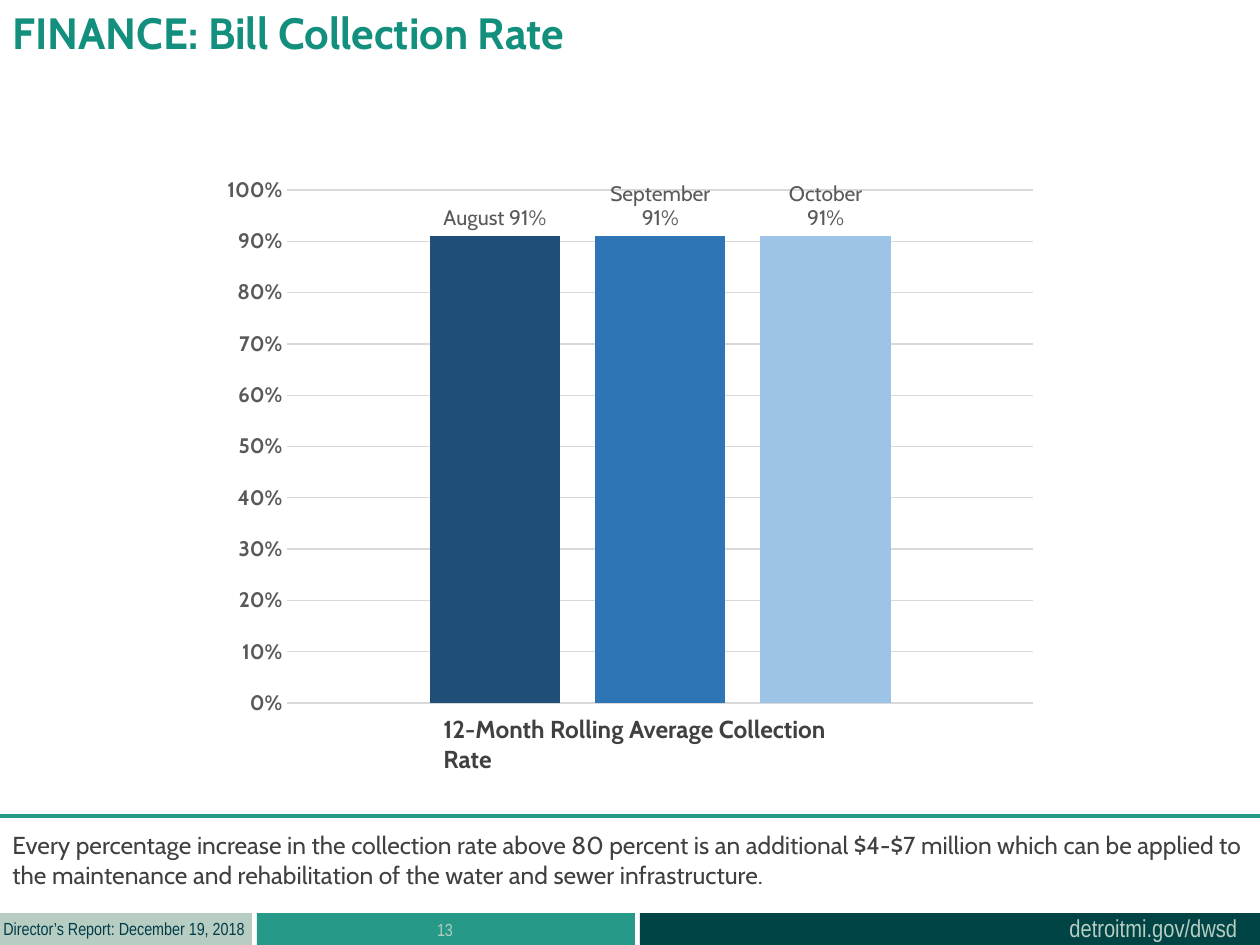
from lxml import etree
from pptx import Presentation, util as u
from pptx.chart.data import CategoryChartData
from pptx.dml.color import RGBColor
from pptx.enum import chart as ch, shapes, text
from pptx.oxml import parse_xml
from pptx.oxml.ns import nsdecls, qn

PX = 914400 / 126
COLORS = {
    "teal": "279989", "dark": "004445", "sage": "B7CDC2", "navy": "003B49",
    "title": "138F7E", "body": "404040", "label": "595959", "grid": "D9D9D9",
    "august": "1F4E79", "september": "2E75B6", "october": "9DC3E6",
}

# Content: boxes are left, top, width, height in px
BARS = [
    ((257, 913, 378, 32), "teal"),
    ((640, 913, 620, 32), "dark"),
    ((0, 913, 252, 32), "sage"),
]
NARROW, CABIN = "Arial Narrow", "Cabin"
TEXTS = [
    ("detroitmi.gov/dwsd", (1057, 907, 195, 43), False, "l",
     {"name": NARROW, "size": 14}, "sage"),
    ("Director’s Report: December 19, 2018", (-9, 912, 276, 34), False, "l",
     {"name": NARROW, "size": 10}, "navy"),
    ("13", (256, 913, 378, 50), True, "c", {"name": NARROW, "size": 10}, "sage"),
    ("FINANCE: Bill Collection Rate", (0, 0, 956, 97), True, "l",
     {"name": CABIN, "size": 25, "bold": True}, "title"),
    ("Every percentage increase in the collection rate above 80 percent is an "
     "additional $4-$7 million which can be applied to the maintenance and "
     "rehabilitation of the water and sewer infrastructure.",
     (0, 824, 1260, 72), True, "l", {"name": CABIN, "size": 14}, "body"),
    ("12-Month Rolling Average Collection Rate", (431, 708, 457, 73), True, "l",
     {"name": CABIN, "size": 14, "bold": True}, "body"),
]
CATEGORY = "12-Monthl Rolling Average"
SERIES = [
    ("August", 0.91, "august", "August 91%"),
    ("September", 0.91, "september", "September\n91%"),
    ("Series 3", 0.91, "october", "October\n91%"),
]
CHART_BOX = (210, 166, 841, 559)
PLOT_BOX = (287, 190, 746, 513)
ALIGN = {"l": text.PP_ALIGN.LEFT, "c": text.PP_ALIGN.CENTER}


def emu(*lengths):
    return [round(n * PX) for n in lengths]


def rgb(name):
    return RGBColor.from_string(COLORS[name])


def set_font(font, values, color):
    for key, value in values.items():
        setattr(font, key, u.Pt(value) if key == "size" else value)
    font.color.rgb = rgb(color)


def add_bar(s, box, color):
    sp = s.shapes.add_shape(shapes.MSO_SHAPE.RECTANGLE, *emu(*box))
    sp.shadow.inherit = False
    sp.fill.solid()
    sp.fill.fore_color.rgb = rgb(color)
    sp.line.fill.background()


def add_text(s, words, box, wrap, align, font, color):
    tf = s.shapes.add_textbox(*emu(*box)).text_frame
    tf.word_wrap = wrap
    p = tf.paragraphs[0]
    p.alignment = ALIGN[align]
    r = p.add_run()
    r.text = words
    set_font(r.font, font, color)


def add_rule(s):
    line = s.shapes.add_connector(shapes.MSO_CONNECTOR.STRAIGHT,
                                  *emu(1260, 816, 0, 816))
    line.line.color.rgb = rgb("teal")
    line.line.width = u.Pt(2.25)
    etree.SubElement(line._element.spPr, qn("a:effectLst"))


def add_rates(s):
    data = CategoryChartData(number_format="0%")
    data.categories = [CATEGORY]
    for name, value, _, _ in SERIES:
        data.add_series(name, [value])
    chart = s.shapes.add_chart(ch.XL_CHART_TYPE.COLUMN_CLUSTERED,
                               *emu(*CHART_BOX), data).chart
    chart.has_legend = chart.has_title = False
    chart.font.name, chart.font.size = "Calibri", u.Pt(10)

    # Axes
    chart.category_axis.visible = False
    axis = chart.value_axis
    for key, value in {"minimum_scale": 0, "maximum_scale": 1, "major_unit": 0.1,
                       "major_tick_mark": ch.XL_TICK_MARK.NONE}.items():
        setattr(axis, key, value)
    axis.format.line.fill.background()
    grid = axis.major_gridlines.format.line
    grid.color.rgb, grid.width = rgb("grid"), u.Pt(0.75)
    axis.tick_labels.number_format = "0%"
    axis.tick_labels.number_format_is_linked = False
    set_font(axis.tick_labels.font,
             {"name": CABIN, "size": 12, "bold": True}, "label")

    # Columns and their labels
    plot = chart.plots[0]
    plot.gap_width, plot.overlap, plot.vary_by_categories = 219, -27, False
    for series, (_, _, color, label) in zip(plot.series, SERIES):
        series.format.fill.solid()
        series.format.fill.fore_color.rgb = rgb(color)
        point_label = series.points[0].data_label
        tf = point_label.text_frame
        tf.text = label
        for p in tf.paragraphs:
            for r in p.runs:
                set_font(r.font, {"name": CABIN, "size": 12, "bold": False}, "label")
        point_label.position = ch.XL_LABEL_POSITION.OUTSIDE_END

    # Fixed plot area, as fractions of the chart
    left, top, width, height = CHART_BOX
    x, y, w, h = PLOT_BOX
    parts = {"x": (x - left) / width, "y": (y - top) / height,
             "w": w / width, "h": h / height}
    modes = "".join(f'<c:{k}Mode val="edge"/>' for k in "xy")
    sizes = "".join(f'<c:{k} val="{v:.3f}"/>' for k, v in parts.items())
    area = chart._chartSpace.chart.plotArea
    for old in area.findall(qn("c:layout")):
        area.remove(old)
    area.insert(0, parse_xml(
        f'<c:layout {nsdecls("c")}><c:manualLayout><c:layoutTarget val="inner"/>'
        f"{modes}{sizes}</c:manualLayout></c:layout>"))


def main():
    prs = Presentation()
    prs.slide_width, prs.slide_height = emu(1260, 945)
    s = prs.slides.add_slide(prs.slide_layouts[6])
    for bar in BARS:
        add_bar(s, *bar)
    add_rates(s)
    for item in TEXTS:
        add_text(s, *item)
    add_rule(s)
    prs.save("out.pptx")


if __name__ == "__main__":
    main()
